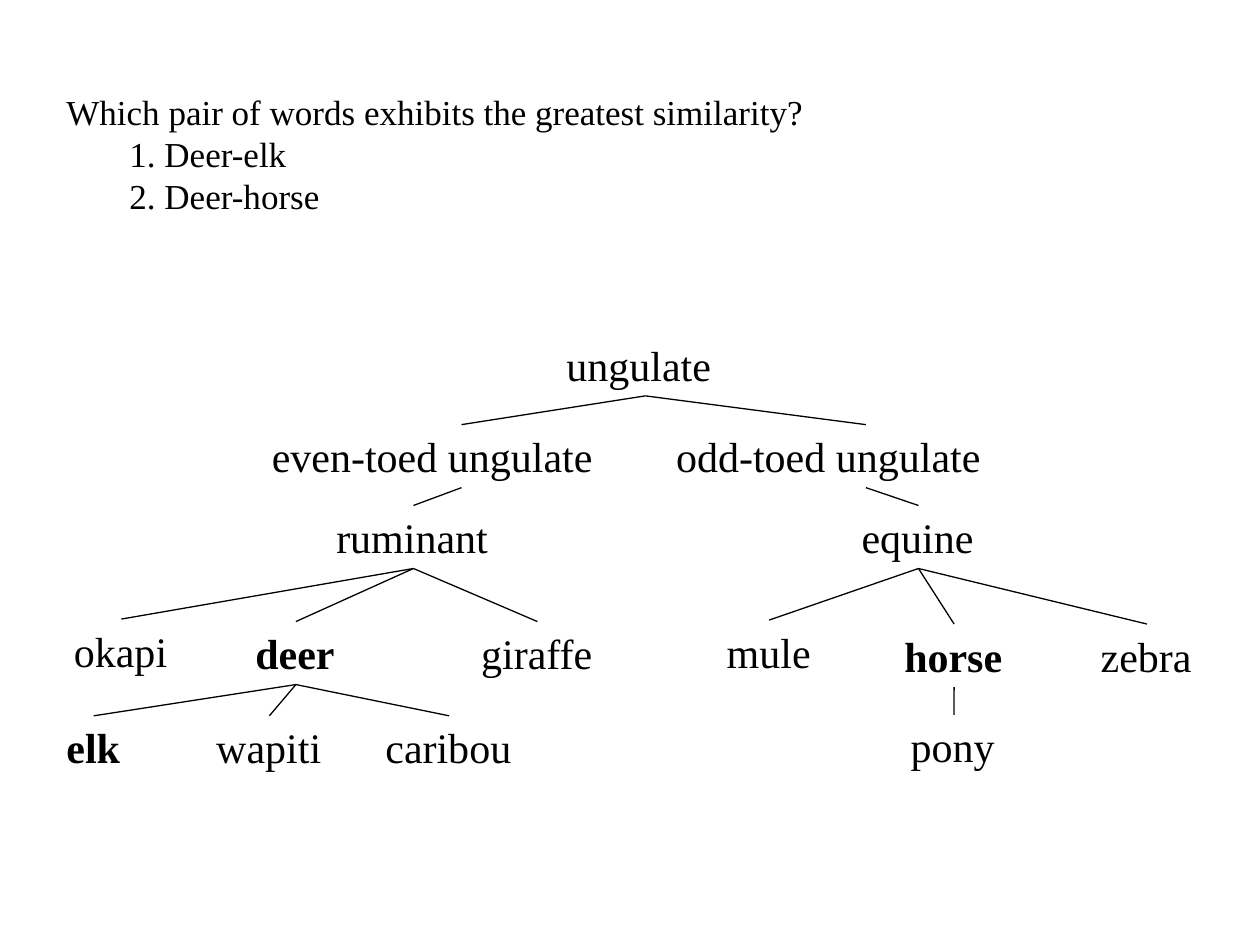
import pptx
import pptx.dml.color
import pptx.enum.shapes
import pptx.enum.text
import pptx.oxml.ns
import pptx.util
from lxml import etree

Cm = pptx.util.Cm
COLORS = {"ink": "000000", "paper": "FFFFFF"}
FONT = "Times New Roman"
NODE_HEIGHT = 1.27

# word: (parent, left, top, width), in cm within the tree's box
TAXONOMY = {
    "ungulate": (None, 10.08, 0, 3.68),
    "even-toed ungulate": ("ungulate", 4.14, 1.85, 8.15),
    "odd-toed ungulate": ("ungulate", 12.29, 1.85, 8.15),
    "ruminant": ("even-toed ungulate", 5.44, 3.48, 3.61),
    "equine": ("odd-toed ungulate", 16.03, 3.48, 2.79),
    "okapi": ("ruminant", 0.15, 5.77, 2.41),
    "deer": ("ruminant", 3.81, 5.82, 2.13),
    "giraffe": ("ruminant", 8.36, 5.82, 2.77),
    "mule": ("equine", 13.31, 5.79, 2.21),
    "horse": ("equine", 16.89, 5.87, 2.51),
    "zebra": ("equine", 20.85, 5.87, 2.36),
    "elk": ("deer", 0, 7.72, 1.6),
    "wapiti": ("deer", 3.02, 7.72, 2.64),
    "caribou": ("deer", 6.43, 7.72, 3.07),
    "pony": ("horse", 17.02, 7.7, 2.24),
}
COMPARED = {"deer", "elk", "horse"}
WRAPPED = {"ungulate", "even-toed ungulate", "odd-toed ungulate"}


def color(name):
    return pptx.dml.color.RGBColor.from_string(COLORS[name])


def add_text(slide, lines, box, size=24, bold=False, wrap=True, indent=0):
    """Place lines of text in a box (cm); lines after the first are indented."""
    label = slide.shapes.add_textbox(*(Cm(length) for length in box))
    frame = label.text_frame
    frame.word_wrap = wrap
    frame.auto_size = pptx.enum.text.MSO_AUTO_SIZE.SHAPE_TO_FIT_TEXT
    for i, line in enumerate(lines):
        paragraph = frame.paragraphs[0] if i == 0 else frame.add_paragraph()
        if i and indent:
            paragraph.level = 1
            properties = paragraph._p.get_or_add_pPr()
            properties.set("marL", str(Cm(indent)))
            properties.set("indent", "0")
        run = paragraph.add_run()
        run.text = line
        run.font.name = FONT
        run.font.size = pptx.util.Pt(size)
        run.font.bold = bold
        run.font.color.rgb = color("ink")
    return label


def add_branch(slide, parent, child):
    """Join the bottom of the parent to the top of the child."""
    branch = slide.shapes.add_connector(
        pptx.enum.shapes.MSO_CONNECTOR.STRAIGHT, 0, 0, 0, 0)
    branch.begin_connect(parent, 2)
    branch.end_connect(child, 0)
    branch.line.color.rgb = color("ink")
    branch.line.width = pptx.util.Pt(0.75)
    etree.SubElement(branch._element.spPr, pptx.oxml.ns.qn("a:effectLst"))


def add_question(slide, left, top, width, height):
    lines = ["Which pair of words exhibits the greatest similarity?",
             "1. Deer-elk", "2. Deer-horse"]
    add_text(slide, lines, (left, top, width, height), size=20, indent=1.27)


def add_tree(slide, left, top):
    nodes = {}
    for word, (parent, x, y, width) in TAXONOMY.items():
        nodes[word] = add_text(
            slide, [word], (left + x, top + y, width, NODE_HEIGHT),
            bold=word in COMPARED, wrap=word in WRAPPED)
        if parent:
            add_branch(slide, nodes[parent], nodes[word])


def main():
    deck = pptx.Presentation()
    deck.slide_width, deck.slide_height = Cm(25.4), Cm(19.05)
    slide = deck.slides.add_slide(deck.slide_layouts[6])
    slide.background.fill.solid()
    slide.background.fill.fore_color.rgb = color("paper")
    add_question(slide, 1.09, 1.7, 17.42, 2.82)
    add_tree(slide, 1.09, 6.71)
    deck.save("out.pptx")


if __name__ == "__main__":
    main()
